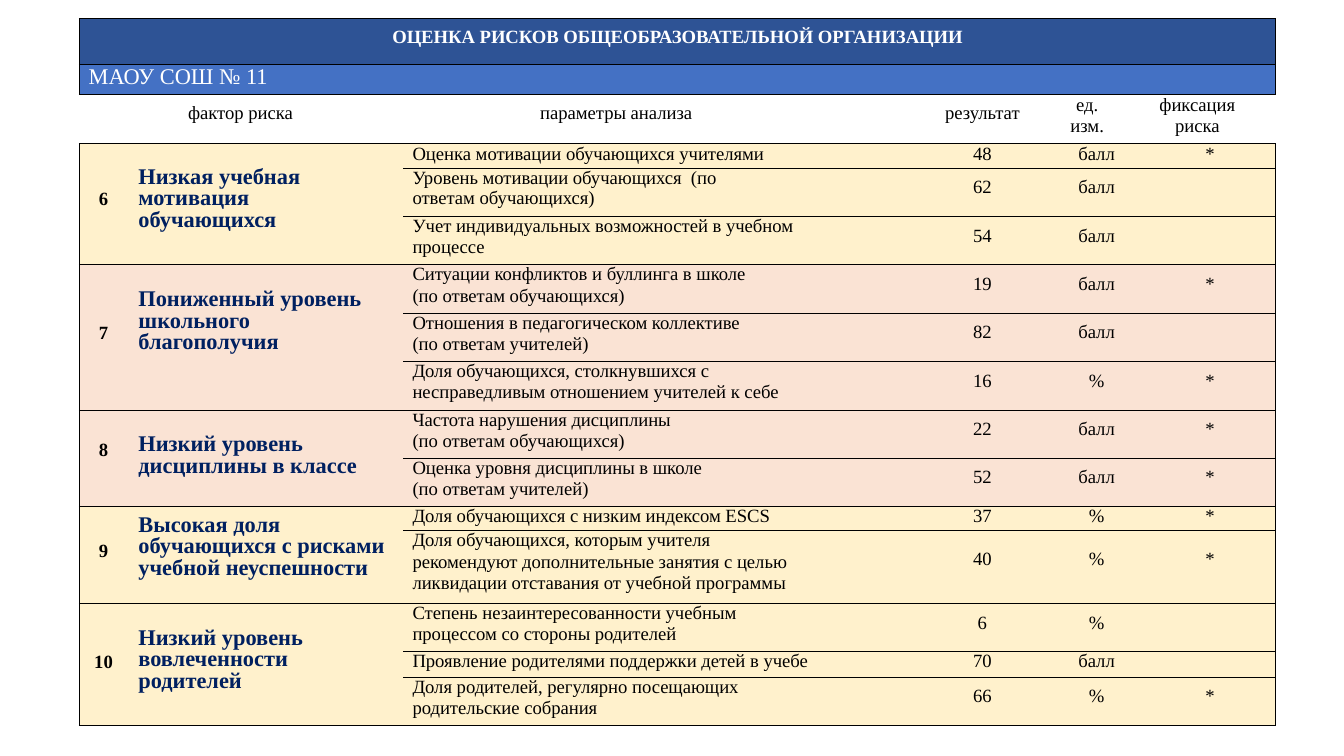
import pptx
import pptx.util
import pptx.dml.color
import pptx.enum.text
import lxml.etree

Inches = pptx.util.Inches
Pt = pptx.util.Pt
ALIGN = pptx.enum.text.PP_ALIGN
NS = "http://schemas.openxmlformats.org/drawingml/2006/main"

COLS = [0.36, 2.05, 3.82, 0.98, 0.72, 0.97]
TOP_ROWS = [0.34, 0.22, 0.37]
YELLOW, PINK, NAVY = "FFF1CC", "FAE3D4", "002060"
THIN, MEDIUM = 0.25, 0.5

HEADERS = [
    (1, "фактор риска", dict(left=0.45, top=0.07, align=ALIGN.LEFT)),
    (2, "параметры анализа", dict(left=1.02, top=0.07, align=ALIGN.LEFT)),
    (3, "результат", dict(top=0.07)),
    (4, "ед. изм.", dict(left=0.15, right=0.29, spacing=11.5)),
    (5, "фиксация риска", dict(right=0.19, spacing=11.5)),
]

GROUPS = [
    (YELLOW, ("6", 1, 1, 0.15, 0), ("Низкая учебная мотивация\nобучающихся", 1, 2, 0, 0.2), [
        (0.18, "Оценка мотивации обучающихся учителями", 0.8, "48", "балл", "*", 0),
        (0.36, "Уровень мотивации обучающихся  (по ответам обучающихся)", 1.25, "62", "балл", "", 0.07),
        (0.36, "Учет индивидуальных возможностей в учебном\nпроцессе", 0.8, "54", "балл", "", 0.07),
    ]),
    (PINK, ("7", 1, 1, 0.07, 0), ("Пониженный уровень школьного благополучия", 0, 3, 0.19, 0.2), [
        (0.36, "Ситуации конфликтов и буллинга в школе\n(по ответам обучающихся)", 0.8, "19", "балл", "*", 0.07),
        (0.36, "Отношения в педагогическом коллективе\n(по ответам учителей)", 0.8, "82", "балл", "", 0.07),
        (0.36, "Доля обучающихся, столкнувшихся с\nнесправедливым отношением учителей к себе",
         0.8, "16", "%", "*", 0.07),
    ]),
    (PINK, ("8", 0, 2, 0.22, 0), ("Низкий уровень\nдисциплины в классе", 0, 2, 0.19, 0.2), [
        (0.36, "Частота нарушения дисциплины\n(по ответам обучающихся)", 0.8, "22", "балл", "*", 0.07),
        (0.36, "Оценка уровня дисциплины в школе\n(по ответам учителей)", 0.8, "52", "балл", "*", 0.07),
    ]),
    (YELLOW, ("9", 1, 1, 0.07, 0), ("Высокая доля\nобучающихся с рисками учебной неуспешности", 0, 2, 0.07, 0), [
        (0.18, "Доля обучающихся с низким индексом ESCS", 0.8, "37", "%", "*", 0),
        (0.54, "Доля обучающихся, которым учителя\nрекомендуют дополнительные занятия с целью "
               "ликвидации отставания от учебной программы", 0.8, "40", "%", "*", 0.14),
    ]),
    (YELLOW, ("10", 1, 1, 0, 0), ("Низкий уровень вовлеченности родителей", 0, 3, 0.19, 0.2), [
        (0.36, "Степень незаинтересованности учебным\nпроцессом со стороны родителей", 0.8, "6", "%", "", 0.07),
        (0.19, "Проявление родителями поддержки детей в учебе", 0.7, "70", "балл", "", 0),
        (0.36, "Доля родителей, регулярно посещающих\nродительские собрания", 0.8, "66", "%", "*", 0.07),
    ]),
]


def rgb(value):
    return pptx.dml.color.RGBColor.from_string(value)


class Deck:
    font = dict(name="Times New Roman", size=Pt(10), bold=False)

    def __init__(self, width):
        self.prs = pptx.Presentation()
        self.prs.slide_width, self.prs.slide_height = Inches(width), Inches(width * 9 / 16)
        self.s = self.prs.slides.add_slide(self.prs.slide_layouts[6])

    def table(self, left, top, cols, rows):
        sp = self.s.shapes.add_table(len(rows), len(cols), Inches(left), Inches(top),
                                     Inches(sum(cols)), Inches(sum(rows)))
        table = sp.table
        table.first_row = table.horz_banding = False
        for column, width in zip(table.columns, cols):
            column.width = Inches(width)
        for row, height in zip(table.rows, rows):
            row.height = Inches(height)
        return table

    def box(self, cell, fill=None, L=0, R=0, T=0, B=0):
        cell.margin_left = cell.margin_right = cell.margin_top = cell.margin_bottom = 0
        tc = cell._tc.get_or_add_tcPr()
        for side, width in zip("LRTB", (L, R, T, B)):
            ln = lxml.etree.SubElement(tc, f"{{{NS}}}ln{side}", w=str(Pt(width)))
            if width:
                solid = lxml.etree.SubElement(ln, f"{{{NS}}}solidFill")
                lxml.etree.SubElement(solid, f"{{{NS}}}srgbClr", val="000000")
            else:
                lxml.etree.SubElement(ln, f"{{{NS}}}noFill")
        if fill:
            cell.fill.solid()
            cell.fill.fore_color.rgb = rgb(fill)
        else:
            cell.fill.background()
        p = cell.text_frame.paragraphs[0]
        lxml.etree.SubElement(p._p, f"{{{NS}}}endParaRPr", sz="800")

    def text(self, cell, text, color="000000", left=0, right=0, top=0,
             align=ALIGN.CENTER, spacing=None, first=None, **style):
        cell.margin_left, cell.margin_right = Inches(left), Inches(right)
        cell.margin_top = Inches(top)
        tf = cell.text_frame
        for i, line in enumerate(text.split("\n")):
            p = tf.add_paragraph() if i else tf.paragraphs[0]
            p.alignment = align
            points = first if first and i == 0 else spacing
            if points:
                p.line_spacing = Pt(points)
            r = p.add_run()
            r.text = line
            for key, value in {**self.font, **style}.items():
                setattr(r.font, key, value)
            r.font.color.rgb = rgb(color)


def add_group(deck, table, start, group):
    fill, number, factor, rows = group
    last = len(rows) - 1
    edge = MEDIUM if start == len(TOP_ROWS) else THIN
    for i in range(len(rows)):
        for c in range(len(COLS)):
            spans_to_end = c < 2 and (number, factor)[c][1] == i and i + (number, factor)[c][2] > last
            deck.box(table.cell(start + i, c), fill,
                     L=MEDIUM if c == 0 else 0, R=MEDIUM if c == 5 else 0,
                     T=edge if i == 0 else THIN if c > 1 else 0,
                     B=THIN if c > 1 or i == last or spans_to_end else 0)
    label_styles = [dict(), dict(color=NAVY, size=Pt(12), left=0.08, align=ALIGN.LEFT)]
    for c, (label, first, count, top, right) in enumerate((number, factor)):
        cell = table.cell(start + first, c)
        if count > 1:
            cell.merge(table.cell(start + first + count - 1, c))
        deck.text(cell, label, top=top, right=right, bold=True, spacing=11.5, **label_styles[c])
    for i, (height, parameter, right, *values, top) in enumerate(rows):
        deck.text(table.cell(start + i, 2), parameter, left=0.07, right=right,
                  align=ALIGN.LEFT, first=10.9, spacing=11.4)
        for c, value in enumerate(values, 3):
            if value:
                deck.text(table.cell(start + i, c), value, top=top, spacing=None if top else 10.9)


def main():
    deck = Deck(10)
    heights = TOP_ROWS + [row[0] for group in GROUPS for row in group[3]]
    table = deck.table(0.59, 0.14, COLS, heights)
    for r, fill in enumerate(("2E5395", "4471C4")):
        for c in range(len(COLS)):
            deck.box(table.cell(r, c), fill, L=MEDIUM, R=MEDIUM, T=MEDIUM, B=THIN if r else MEDIUM)
        table.cell(r, 0).merge(table.cell(r, 5))
    deck.text(table.cell(0, 0), "ОЦЕНКА РИСКОВ ОБЩЕОБРАЗОВАТЕЛЬНОЙ ОРГАНИЗАЦИИ",
              "FFFFFF", top=0.06, bold=True)
    deck.text(table.cell(1, 0), "МАОУ СОШ № 11", "FFFFFF", left=0.07, align=ALIGN.LEFT,
              spacing=13.4, size=Pt(12))
    for c in range(len(COLS)):
        deck.box(table.cell(2, c), T=THIN, B=MEDIUM)
    for c, label, style in HEADERS:
        deck.text(table.cell(2, c), label, **style)
    start = len(TOP_ROWS)
    for group in GROUPS:
        add_group(deck, table, start, group)
        start += len(group[3])
    deck.prs.save("out.pptx")


if __name__ == "__main__":
    main()
